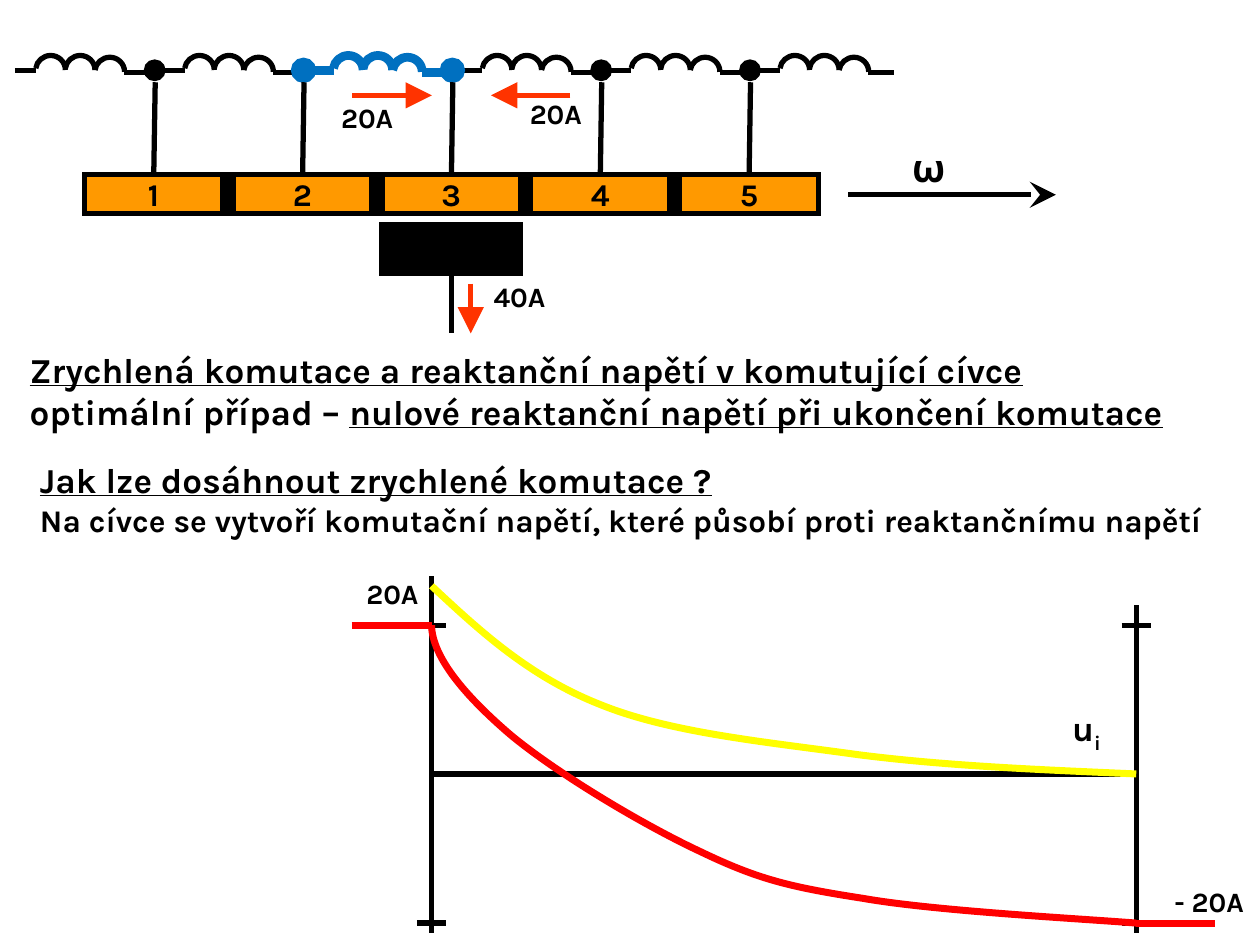
from dataclasses import dataclass

from lxml import etree
from pptx import Presentation
from pptx.dml.color import RGBColor
from pptx.enum.shapes import MSO_CONNECTOR, MSO_SHAPE
from pptx.enum.text import MSO_ANCHOR, MSO_AUTO_SIZE, PP_ALIGN
from pptx.oxml.ns import qn
from pptx.util import Pt

STRAIGHT = MSO_CONNECTOR.STRAIGHT
RECTANGLE, OVAL = MSO_SHAPE.RECTANGLE, MSO_SHAPE.OVAL
MIDDLE, CENTER = MSO_ANCHOR.MIDDLE, PP_ALIGN.CENTER
FIT_SHAPE = MSO_AUTO_SIZE.SHAPE_TO_FIT_TEXT

BLACK = RGBColor(0x00, 0x00, 0x00)
BLUE = RGBColor(0x00, 0x70, 0xC0)
ORANGE = RGBColor(0xFF, 0x99, 0x00)
ARROW_RED = RGBColor(0xFF, 0x33, 0x00)
RED = RGBColor(0xFF, 0x00, 0x00)
YELLOW = RGBColor(0xFF, 0xFF, 0x00)

FONT = "Karla"
INSET = 2.8
PITCH = 85.05  # distance between neighbouring coils and commutator bars
TURN = 16.9  # width of one coil turn

Point = tuple[float, float]


@dataclass(frozen=True)
class Line:
    start: Point
    end: Point
    color: RGBColor = BLACK
    weight: float = 3
    arrow: str = ""


@dataclass(frozen=True)
class Run:
    text: str
    underline: bool = False
    subscript: bool = False


@dataclass(frozen=True)
class Paragraph:
    runs: tuple[Run, ...]
    size: float


@dataclass(frozen=True)
class Label:
    left: float
    top: float
    width: float
    height: float
    paragraphs: tuple[Paragraph, ...]
    wrap: bool = False


def draw_line(shapes, line: Line) -> None:
    connector = shapes.add_connector(
        STRAIGHT, *(Pt(value) for value in line.start + line.end))
    connector.line.color.rgb = line.color
    connector.line.width = Pt(line.weight)
    if line.arrow:
        outline = connector.line._get_or_add_ln()
        etree.SubElement(outline, qn("a:tailEnd"), type=line.arrow,
                         w="lg", len="lg")
    etree.SubElement(connector._element.spPr, qn("a:effectLst"))


def draw_shape(shapes, kind, left: float, top: float, width: float,
               height: float, fill: RGBColor, outline: RGBColor,
               weight: float = 3):
    shape = shapes.add_shape(kind, Pt(left), Pt(top), Pt(width), Pt(height))
    shape.shadow.inherit = False
    shape.fill.solid()
    shape.fill.fore_color.rgb = fill
    shape.line.color.rgb = outline
    shape.line.width = Pt(weight)
    etree.SubElement(shape.line._get_or_add_ln(), qn("a:miter"), lim="800000")
    return shape


def draw_curve(shapes, points: list[Point], color: RGBColor,
               weight: float) -> None:
    """Draw chained cubic Bézier arcs: a start, then three points per arc."""
    vertices = [(Pt(x), Pt(y)) for x, y in points]
    builder = shapes.build_freeform(*vertices[0])
    builder.add_line_segments(vertices[1:], close=False)
    curve = builder.convert_to_shape()
    # Join every three straight segments into one cubic arc
    segments = list(curve._element.iter(qn("a:lnTo")))
    for first in range(0, len(segments), 3):
        arc = etree.Element(qn("a:cubicBezTo"))
        segments[first].addprevious(arc)
        for segment in segments[first:first + 3]:
            arc.append(segment[0])
            segment.getparent().remove(segment)
    curve.shadow.inherit = False
    curve.fill.background()
    curve.line.color.rgb = color
    curve.line.width = Pt(weight)


def draw_coil(shapes, left: float, color: RGBColor, weight: float) -> None:
    draw_line(shapes, Line((left, 40.3), (left + 12, 40.3), color, weight))
    for turn in range(3):
        x = left + 12 + TURN * turn
        y = 41 if turn == 2 else 40
        draw_curve(shapes, [(x + TURN, y), (x + TURN, y - 4.7),
                            (x + 13, y - 8.3), (x + 8.5, y - 8.3),
                            (x + 4.2, y - 8.3), (x + 0.5, y - 5),
                            (x, y - 1)], color, weight)
    draw_line(shapes, Line((left + 62.5, 41.4), (left + 77, 41.4),
                           color, weight))


def draw_label(shapes, label: Label) -> None:
    box = shapes.add_textbox(Pt(label.left), Pt(label.top),
                             Pt(label.width), Pt(label.height))
    frame = box.text_frame
    frame.word_wrap = label.wrap
    frame.auto_size = FIT_SHAPE
    frame.margin_left = frame.margin_right = Pt(INSET)
    frame.margin_top = frame.margin_bottom = Pt(INSET)
    for index, content in enumerate(label.paragraphs):
        paragraph = frame.add_paragraph() if index else frame.paragraphs[0]
        set_font(paragraph, content.size)
        for part in content.runs:
            run = paragraph.add_run()
            run.text = part.text
            if part.underline:
                run.font.underline = True
            if part.subscript:
                run._r.get_or_add_rPr().set("baseline", "-25000")


def set_font(paragraph, size: float) -> None:
    font = paragraph.font
    font.name, font.size, font.bold = FONT, Pt(size), True
    font.color.rgb = BLACK


def simple(text: str, size: float = 16) -> tuple[Paragraph, ...]:
    return (Paragraph((Run(text),), size),)


LABELS = [
    Label(279.2, 156.8, 37.4, 25, simple("40A")),
    Label(518.4, 79.2, 21, 32.4, simple("ω", 22)),
    Label(206.6, 326.7, 37.4, 25, simple("20A")),
    Label(668.2, 502.6, 49, 25, simple("- 20A")),
    Label(192.2, 54.7, 37.4, 25, simple("20A")),
    Label(300, 52.4, 37.4, 25, simple("20A")),
    Label(609.8, 401, 22.3, 30.2,
          (Paragraph((Run("u"), Run("i", subscript=True)), 20),)),
    Label(14.2, 196.4, 692, 54, (
        Paragraph((Run("Zrychlená komutace a reaktanční napětí "
                       "v komutující cívce", underline=True),), 20),
        Paragraph((Run("optimální případ – "),
                   Run("nulové reaktanční napětí při ukončení komutace",
                       underline=True)), 20)), wrap=True),
    Label(20, 259.2, 686, 72.7, (
        Paragraph((Run("Jak lze dosáhnout zrychlené komutace ?",
                       underline=True),), 20),
        Paragraph((Run("Na cívce se vytvoří komutační napětí, "
                       "které působí proti reaktančnímu napětí"),), 18)),
        wrap=True),
]

CURRENT_AND_MOTION = [
    Line((257.9, 157.7), (257.9, 190.5)),
    Line((269, 162), (269, 190.5), ARROW_RED, arrow="triangle"),
    Line((201.3, 54.5), (246.8, 54.5), ARROW_RED, arrow="triangle"),
    Line((326, 54.5), (280.6, 54.5), ARROW_RED, arrow="triangle"),
    Line((484.6, 111.3), (603.4, 111.3), arrow="stealth"),
]

AXIS_LEFT, AXIS_RIGHT = 246.6, 649.3
LEVEL_TOP, LEVEL_ZERO, LEVEL_BOTTOM = 357.3, 442.3, 527.5
AXES = [
    Line((AXIS_LEFT, 346), (AXIS_LEFT, 533)),
    Line((AXIS_LEFT, 351.4), (AXIS_LEFT, 329)),
    Line((AXIS_RIGHT, 346), (AXIS_RIGHT, 533)),
    Line((AXIS_LEFT, LEVEL_ZERO), (AXIS_RIGHT, LEVEL_ZERO)),
] + [Line((x - 8.4, y), (x + 8.4, y))
     for x in (AXIS_LEFT, AXIS_RIGHT) for y in (LEVEL_TOP, LEVEL_BOTTOM)]

CURRENT_ENDS = [
    Line((201, LEVEL_TOP), (AXIS_LEFT, LEVEL_TOP), RED, 4),
    Line((AXIS_RIGHT, LEVEL_BOTTOM), (694.2, LEVEL_BOTTOM), RED, 4),
]
CURRENT_CURVE = [
    (AXIS_LEFT, LEVEL_TOP), (247, 375.8), (266.4, 398.2), (291.6, 419.8),
    (317.5, 441.4), (366.5, 470.9), (400.3, 486.7),
    (433.4, 502.6), (451.4, 506.9), (493.2, 513.4),
    (534.2, 520.6), (616.3, 524.9), (AXIS_RIGHT, LEVEL_BOTTOM)]
VOLTAGE_CURVE = [
    (AXIS_LEFT, 334.8), (274.3, 360.7), (302.4, 386.6), (342.7, 402.5),
    (383, 419), (439.2, 424.1), (490.3, 431.3),
    (541.4, 437.8), (595.4, 439.9), (AXIS_RIGHT, LEVEL_ZERO)]


def main() -> None:
    deck = Presentation()
    deck.slide_width, deck.slide_height = Pt(720), Pt(540)
    shapes = deck.slides.add_slide(deck.slide_layouts[6]).shapes

    # Brush and commutator bars
    draw_shape(shapes, RECTANGLE, 218.2, 128.2, 79.2, 28.1, BLACK, BLACK)
    draw_shape(shapes, RECTANGLE, 48.2, 99.9, 419.4, 22.3, BLACK, BLACK)
    for bar in range(5):
        segment = draw_shape(shapes, RECTANGLE, 48.2 + PITCH * bar, 99.9,
                             79.2, 22.3, ORANGE, BLACK)
        frame = segment.text_frame
        frame.word_wrap, frame.vertical_anchor = False, MIDDLE
        number = frame.paragraphs[0]
        number.text, number.alignment = str(bar + 1), CENTER
        set_font(number, 18)

    # Winding; the commutating coil and its two nodes are blue
    for coil in (0, 1, 3, 4, 5, 2):
        color, weight = (BLUE, 5) if coil == 2 else (BLACK, 3)
        draw_coil(shapes, 8.5 + PITCH * coil, color, weight)
    for node in range(5):
        x = 88.4 + PITCH * node
        color, weight = (BLUE, 5) if node in (1, 2) else (BLACK, 3)
        draw_shape(shapes, OVAL, x - 4.7, 35.5, 9.4, 9.4,
                   color, color, weight)
        draw_line(shapes, Line((x + 0.3, 47), (x - 0.5, 98.6)))

    # Arrows, graph and texts
    for line in CURRENT_AND_MOTION + AXES:
        draw_line(shapes, line)
    for label in LABELS:
        draw_label(shapes, label)
    for line in CURRENT_ENDS:
        draw_line(shapes, line)
    draw_curve(shapes, CURRENT_CURVE, RED, 4)
    draw_curve(shapes, VOLTAGE_CURVE, YELLOW, 4)

    deck.save("out.pptx")


if __name__ == "__main__":
    main()
